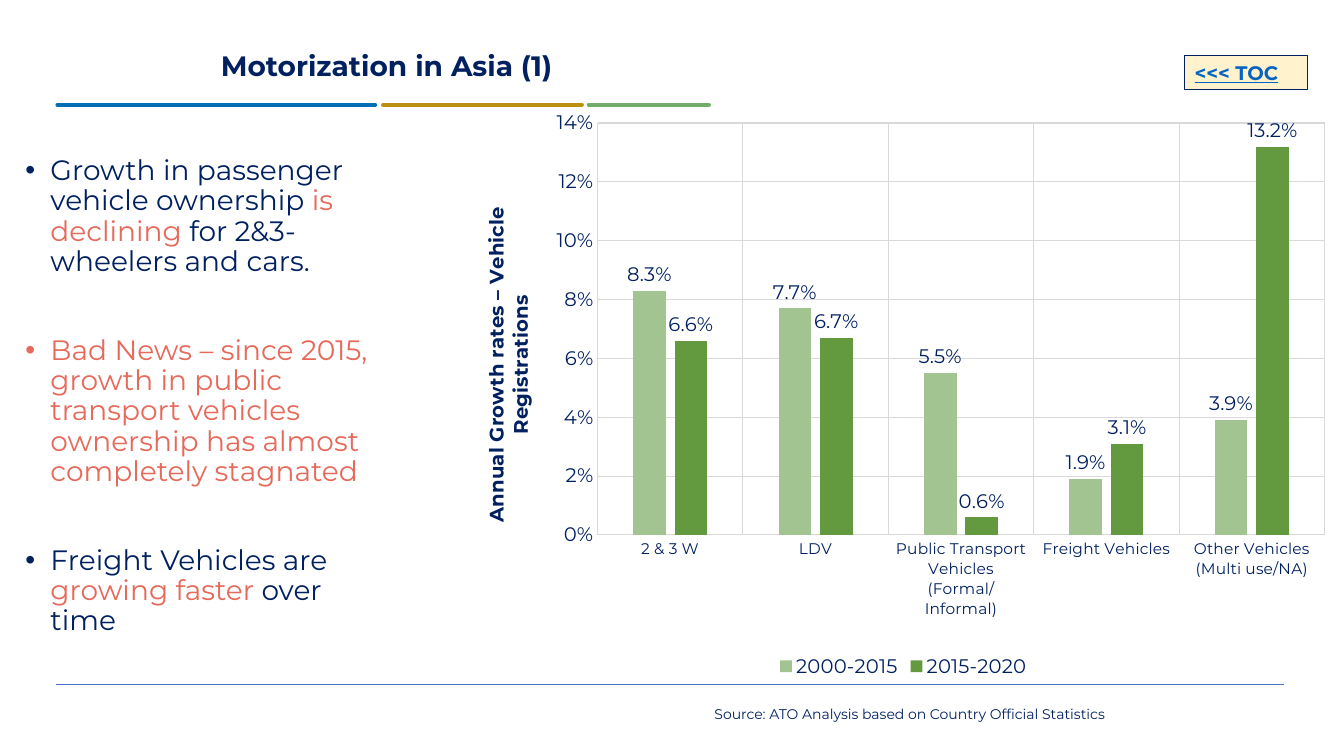
"""Build the slide on motorization in Asia with its growth chart."""
from dataclasses import dataclass
from typing import Any

import lxml.etree
import pptx
import pptx.chart.data
import pptx.dml.color
import pptx.enum.chart
import pptx.enum.shapes
import pptx.enum.text
import pptx.oxml
import pptx.oxml.ns
import pptx.util

WIDTH, HEIGHT = pptx.util.Inches(13.33), pptx.util.Inches(7.5)
NAVY, CORAL, GRID = "002060", "E6695A", "D9D9D9"
FONT = "Montserrat"
qn = pptx.oxml.ns.qn


@dataclass
class Box:
    """A rectangle in percent of the slide's width and height."""

    left: float
    top: float
    width: float
    height: float

    def place(self) -> dict[str, int]:
        """Return the rectangle as shape attributes."""
        return dict(left=x(self.left), top=y(self.top), width=x(self.width), height=y(self.height))


@dataclass
class Rule:
    """A horizontal line in percent of the slide's size."""

    start: float
    end: float
    level: float
    color: str
    weight: float
    cap: str


@dataclass
class Series:
    """One set of columns in the chart."""

    name: str
    values: tuple[float, ...]
    color: str


RULES = [
    Rule(4.2, 95.5, 90.53, "4472C4", 0.5, "flat"),
    Rule(4.28, 27.91, 13.87, "006EB7", 3, "rnd"),
    Rule(28.51, 43.29, 13.87, "BB8F10", 3, "rnd"),
    Rule(43.81, 52.74, 13.87, "71AD68", 3, "rnd"),
]
BULLETS = [
    [("Growth in passenger vehicle ownership ", NAVY), ("is declining ", CORAL),
     ("for 2&3- wheelers and cars.", NAVY)],
    [("Bad News – since 2015, growth in public transport vehicles ownership "
      "has almost completely stagnated", CORAL)],
    [("Freight Vehicles are ", NAVY), ("growing faster", CORAL), (" over time", NAVY)],
]
CATEGORIES = ["2 & 3 W", "LDV", "Public Transport Vehicles (Formal/Informal)",
              "Freight Vehicles", "Other Vehicles (Multi use/NA)"]
SERIES = [
    Series("2000-2015", (0.083, 0.077, 0.055, 0.019, 0.039), "A1C490"),
    Series("2015-2020", (0.066, 0.067, 0.006, 0.031, 0.132), "639A3F"),
]
PLOT_AREA = {"x": 0.153, "y": 0.021, "w": 0.825, "h": 0.721}


def x(share: float) -> int:
    """Turn a percentage of the slide's width into a length."""
    return round(WIDTH * share / 100)


def y(share: float) -> int:
    """Turn a percentage of the slide's height into a length."""
    return round(HEIGHT * share / 100)


def rgb(color: str) -> pptx.dml.color.RGBColor:
    """Turn a hex string into a colour."""
    return pptx.dml.color.RGBColor.from_string(color)


def apply(target: Any, **values: Any) -> None:
    """Set attributes from format values."""
    for name, value in values.items():
        setattr(target, name, value)


def style(font: Any, size: float, color: str = NAVY, **values: Any) -> None:
    """Format a font."""
    apply(font, name=FONT, size=pptx.util.Pt(size), **values)
    font.color.rgb = rgb(color)


def stroke(line: Any, color: str, weight: float) -> None:
    """Format a line."""
    line.color.rgb = rgb(color)
    line.width = pptx.util.Pt(weight)


def write(s: Any, text: str, size: float, color: str = NAVY, **values: Any) -> Any:
    """Write one formatted paragraph into a shape and return it."""
    tf = s.text_frame
    apply(tf, word_wrap=True, auto_size=pptx.enum.text.MSO_AUTO_SIZE.NONE,
          vertical_anchor=pptx.enum.text.MSO_ANCHOR.MIDDLE)
    p = tf.paragraphs[0]
    p.alignment = pptx.enum.text.PP_ALIGN.LEFT
    r = p.add_run()
    r.text = text
    style(r.font, size, color, **values)
    return p


def add_rule(slide: Any, rule: Rule) -> None:
    """Draw a horizontal line."""
    s = slide.shapes.add_connector(pptx.enum.shapes.MSO_CONNECTOR.STRAIGHT,
                                   x(rule.start), y(rule.level), x(rule.end), y(rule.level))
    stroke(s.line, rule.color, rule.weight)
    s.line._get_or_add_ln().set("cap", rule.cap)
    lxml.etree.SubElement(s._element.spPr, qn("a:effectLst"))


def add_bullets(s: Any) -> None:
    """Fill the body with the bulleted list."""
    apply(s, **Box(1.13, 14.67, 27.01, 75.6).place())
    tf = s.text_frame
    apply(tf, word_wrap=True, auto_size=pptx.enum.text.MSO_AUTO_SIZE.NONE,
          vertical_anchor=pptx.enum.text.MSO_ANCHOR.MIDDLE)
    indent = pptx.util.Inches(0.25)
    for i, parts in enumerate(BULLETS):
        p = tf.add_paragraph() if i else tf.paragraphs[0]
        apply(p, line_spacing=0.9, space_before=pptx.util.Pt(42 if i else 0))
        pPr = p._p.get_or_add_pPr()
        pPr.set("marL", str(indent))
        pPr.set("indent", str(-indent))
        lxml.etree.SubElement(pPr, qn("a:buFont")).set("typeface", "Arial")
        lxml.etree.SubElement(pPr, qn("a:buChar")).set("char", "•")
        for text, color in parts:
            r = p.add_run()
            r.text = text
            style(r.font, 20, color)


def add_growth_chart(slide: Any, box: Box) -> None:
    """Add the clustered columns of growth rates."""
    data = pptx.chart.data.CategoryChartData(number_format="0.0%")
    data.categories = CATEGORIES
    for series in SERIES:
        data.add_series(series.name, series.values)
    kind = pptx.enum.chart.XL_CHART_TYPE.COLUMN_CLUSTERED
    chart = slide.shapes.add_chart(kind, *box.place().values(), data).chart
    apply(chart, has_title=False, has_legend=True)
    style(chart.font, 14)
    apply(chart.legend, position=pptx.enum.chart.XL_LEGEND_POSITION.BOTTOM, include_in_layout=False)
    style(chart.legend.font, 14)
    plot = chart.plots[0]
    apply(plot, gap_width=219, overlap=-27, vary_by_categories=False)
    for drawn, series in zip(plot.series, SERIES):
        drawn.format.fill.solid()
        drawn.format.fill.fore_color.rgb = rgb(series.color)
        labels = drawn.data_labels
        apply(labels, show_value=True, number_format="0.0%", number_format_is_linked=False,
              position=pptx.enum.chart.XL_LABEL_POSITION.OUTSIDE_END)
        style(labels.font, 14)
    none = pptx.enum.chart.XL_TICK_MARK.NONE
    for axis, size in ((chart.category_axis, 11), (chart.value_axis, 14)):
        apply(axis, major_tick_mark=none, minor_tick_mark=none, has_major_gridlines=True)
        stroke(axis.major_gridlines.format.line, GRID, 0.75)
        style(axis.tick_labels.font, size)
    stroke(chart.category_axis.format.line, GRID, 0.75)
    axis = chart.value_axis
    apply(axis, minimum_scale=0, maximum_scale=0.14, major_unit=0.02, has_title=True)
    axis.format.line.fill.background()
    apply(axis.tick_labels, number_format="0%", number_format_is_linked=False)
    r = axis.axis_title.text_frame.paragraphs[0].add_run()
    r.text = "Annual Growth rates – Vehicle Registrations"
    style(r.font, 14, bold=True)
    area = chart._chartSpace.chart.plotArea
    for old in area.findall(qn("c:layout")):
        area.remove(old)
    layout = lxml.etree.Element(qn("c:layout"))
    area.insert(0, layout)
    manual = lxml.etree.SubElement(layout, qn("c:manualLayout"))
    settings = {"layoutTarget": "inner", "xMode": "edge", "yMode": "edge", **PLOT_AREA}
    for name, value in settings.items():
        lxml.etree.SubElement(manual, qn(f"c:{name}")).set("val", str(value))


def main() -> None:
    """Build and save the slide."""
    prs = pptx.Presentation()
    apply(prs, slide_width=WIDTH, slide_height=HEIGHT)
    slide = prs.slides.add_slide(prs.slide_layouts[1])
    for rule in RULES:
        add_rule(slide, rule)
    add_growth_chart(slide, Box(34.43, 14.67, 65.57, 75.6))
    title = slide.shapes.title
    apply(title, **Box(15.68, 3.2, 53.56, 11.47).place())
    write(title, "Motorization in Asia (1)", 20, bold=True).line_spacing = 0.9
    add_bullets(slide.placeholders[1])
    source = slide.shapes.add_textbox(*Box(50.79, 91.73, 33.76, 5.33).place().values())
    p = write(source, "Source: ATO Analysis based on Country Official Statistics", 10)
    p.alignment = pptx.enum.text.PP_ALIGN.CENTER
    toc = slide.shapes.add_shape(pptx.enum.shapes.MSO_SHAPE.RECTANGLE,
                                 *Box(88.15, 7.33, 9.15, 4.53).place().values())
    toc.shadow.inherit = False
    toc.fill.solid()
    toc.fill.fore_color.rgb = rgb("FFF2CC")
    stroke(toc.line, NAVY, 0.75)
    write(toc, "<<< TOC", 14, "0563C1", bold=True, underline=True)
    prs.save("out.pptx")


if __name__ == "__main__":
    main()
